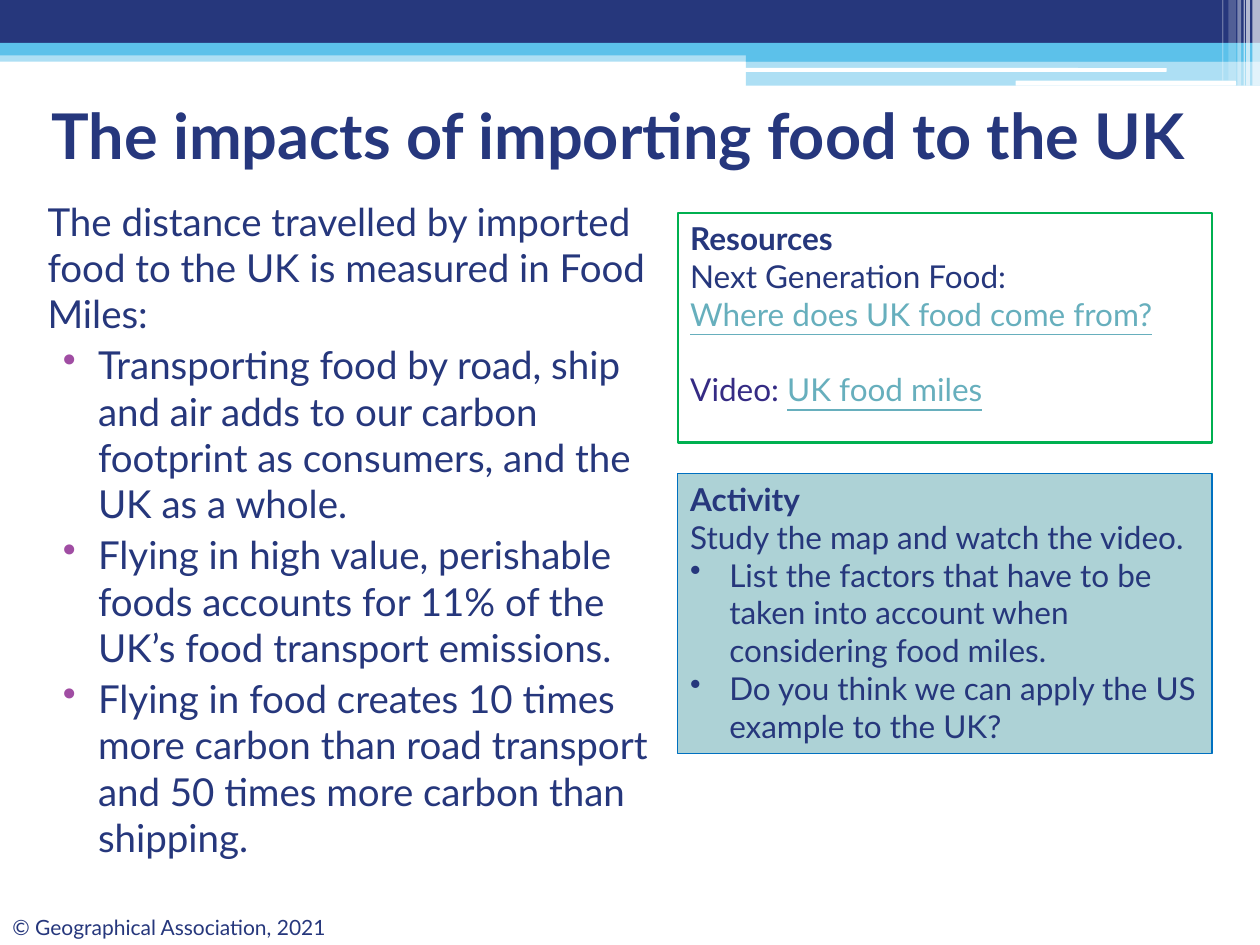
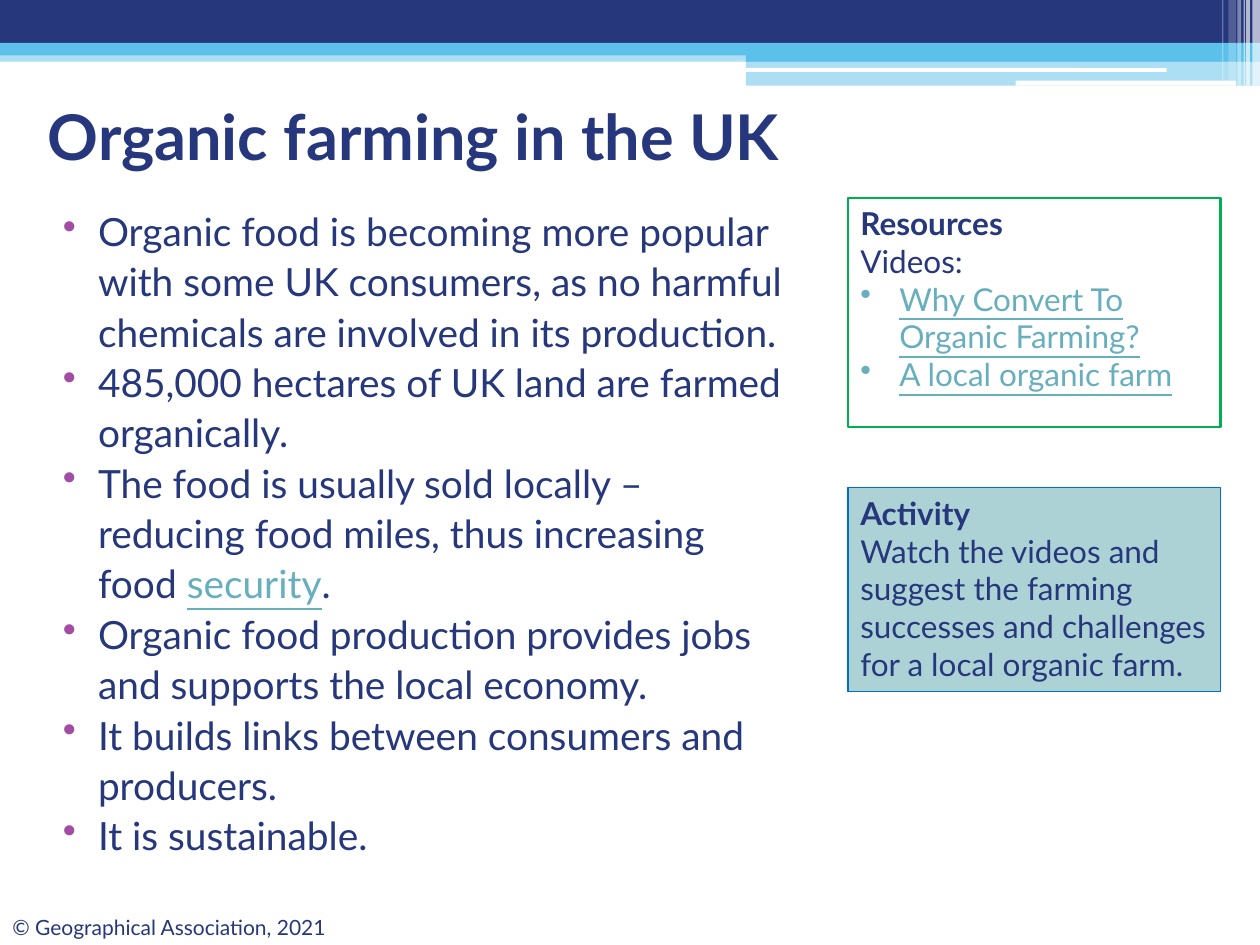
from dataclasses import dataclass

from lxml import etree
from pptx import Presentation
from pptx.dml.color import RGBColor
from pptx.enum.shapes import MSO_SHAPE
from pptx.enum.text import MSO_ANCHOR, PP_ALIGN
from pptx.oxml.ns import qn
from pptx.util import Inches, Pt


@dataclass(frozen=True)
class Theme:
    font: str = "Lato"
    navy: str = "26377C"
    title: str = "26377D"
    sky: str = "5CC1EA"
    white: str = "FFFFFF"
    link: str = "67AFBD"
    violet: str = "352B84"
    bullet: str = "A04DA3"
    resource_line: str = "00B050"
    activity_fill: str = "ADD2D6"
    activity_line: str = "0070C0"
    title_size: float = 36
    panel_size: float = 18
    footer_size: float = 12


@dataclass
class Text:
    """One paragraph: runs are (text, style) pairs, style being plain, bold, link or violet."""
    runs: list
    bullet: str = ""
    indent: float = 0
    hanging: float = 0
    before: float = 0
    spacing: float = 1.0


THEME = Theme()
RUN_COLOURS = {"link": THEME.link, "violet": THEME.violet, "title": THEME.title}


def add_block(slide, place, fill=None, opacity=100, line=None, line_width=0.75,
              kind=MSO_SHAPE.RECTANGLE):
    shape = slide.shapes.add_shape(kind, *map(Inches, place))
    shape.shadow.inherit = False
    if fill:
        shape.fill.solid()
        shape.fill.fore_color.rgb = RGBColor.from_string(fill)
        if opacity < 100:
            colour = shape.fill._xPr.find(qn("a:solidFill"))[0]
            etree.SubElement(colour, qn("a:alpha"), val=str(opacity * 1000))
    else:
        shape.fill.background()
    if line:
        shape.line.color.rgb = RGBColor.from_string(line)
        shape.line.width = Pt(line_width)
    else:
        shape.line.fill.background()
    return shape


def write(shape, texts, size, anchor=MSO_ANCHOR.TOP):
    frame = shape.text_frame
    frame.word_wrap = True
    frame.vertical_anchor = anchor
    for index, text in enumerate(texts):
        paragraph = frame.paragraphs[0] if index == 0 else frame.add_paragraph()
        if text.bullet:
            properties = paragraph._p.get_or_add_pPr()
            properties.set("marL", str(Inches(text.indent)))
            properties.set("indent", str(-Inches(text.hanging)))
            colour = etree.SubElement(properties, qn("a:buClr"))
            etree.SubElement(colour, qn("a:srgbClr"), val=text.bullet)
            etree.SubElement(properties, qn("a:buChar"), char="•")
        paragraph.alignment = PP_ALIGN.LEFT
        paragraph.line_spacing = text.spacing
        if index:
            paragraph.space_before = Pt(text.before)
        for words, style in text.runs:
            run = paragraph.add_run()
            run.text = words
            run.font.name = THEME.font
            run.font.size = Pt(size)
            run.font.bold = style in ("bold", "title")
            run.font.underline = style == "link"
            run.font.color.rgb = RGBColor.from_string(RUN_COLOURS.get(style, THEME.navy))


# Header: (place, colour, opacity)
HEADER_BANDS = [
    ((0, 0.4, 10, 0.09), THEME.sky, 50),
    ((0, 0, 10, 0.34), THEME.navy, 100),
    ((0, 0.34, 10, 0.1), THEME.sky, 100),
    ((5.92, 0.39, 4.08, 0.1), THEME.sky, 100),
    ((5.92, 0.48, 4.08, 0.2), THEME.sky, 50),
]
HEADER_SLITS = [(5.91, 0.54, 3.35, 0.03), (8.06, 0.64, 1.75, 0.04)]
# Vertical stripes: (left, width, height, opacity)
HEADER_STRIPES = [
    (9.94, 0.06, 0.68, 65), (9.89, 0.03, 0.68, 65), (9.87, 0.01, 0.68, 60),
    (9.82, 0.03, 0.68, 40), (9.75, 0.06, 0.64, 20), (9.7, 0.01, 0.64, 30),
]

BODY_BULLET = dict(bullet=THEME.bullet, indent=0.4, hanging=0.28)
PANEL_BULLET = dict(indent=0.31, hanging=0.31)

IMPACTS = [
    "Transporting food by road, ship and air adds to our carbon footprint as consumers, "
    "and the UK as a whole.",
    "Flying in high value, perishable foods accounts for 11% of the UK’s food transport "
    "emissions.",
    "Flying in food creates 10 times more carbon than road transport and 50 times more "
    "carbon than shipping.",
]
ORGANIC_POINTS = [
    [("Organic food is becoming more popular with some UK consumers, as no harmful "
      "chemicals are involved in its production.", "plain")],
    [("485,000 hectares of UK land are farmed organically.", "plain")],
    [("The food is usually sold locally – reducing food miles, thus increasing food ", "plain"),
     ("security", "link"), (".", "plain")],
    [("Organic food production provides jobs and supports the local economy.", "plain")],
    [("It builds links between consumers and producers.", "plain")],
    [("It is sustainable.", "plain")],
]

SLIDES = [
    dict(
        title="The impacts of importing food to the UK",
        title_place=(0.31, 0.61, 9.33, 0.91),
        body_place=(0.28, 1.52, 4.96, 5.43),
        body_size=22,
        body=[Text([("The distance travelled by imported food to the UK is measured in "
                     "Food Miles:", "plain")])]
        + [Text([(impact, "plain")], before=3, **BODY_BULLET) for impact in IMPACTS],
        resources_place=(5.38, 1.69, 4.24, 1.82),
        resources=[
            Text([("Next Generation Food:", "plain")]),
            Text([("Where does UK food come from?", "link")]),
            Text([("Video: ", "violet"), ("UK food miles", "link")], before=21.6),
        ],
        activity_place=(5.38, 3.76, 4.24, 2.22),
        activity=[
            Text([("Study the map and watch the video.", "plain")]),
            Text([("List the factors that have to be taken into account when considering "
                   "food miles.", "plain")], bullet=THEME.navy, **PANEL_BULLET),
            Text([("Do you think we can apply the US example to the UK?", "plain")],
                 bullet=THEME.navy, **PANEL_BULLET),
        ],
    ),
    dict(
        title="Organic farming in the UK",
        title_place=(0.28, 0.64, 8.85, 0.87),
        body_place=(0.28, 1.57, 6.06, 5.47),
        body_size=22.2,
        body=[Text(runs, spacing=1.08, **BODY_BULLET) for runs in ORGANIC_POINTS],
        resources_place=(6.73, 1.57, 2.96, 1.82),
        resources=[Text([("Videos:", "plain")])]
        + [Text([(video, "link")], bullet=THEME.link, **PANEL_BULLET)
           for video in ("Why Convert To Organic Farming?", "A local organic farm")],
        activity_place=(6.73, 3.87, 2.96, 1.62),
        activity=[Text([("Watch the videos and suggest the farming successes and challenges "
                         "for a local organic farm.", "plain")])],
    ),
]

presentation = Presentation()
presentation.slide_width = Inches(10)
presentation.slide_height = Inches(7.5)

for content in SLIDES:
    slide = presentation.slides.add_slide(presentation.slide_layouts[6])

    for place, colour, opacity in HEADER_BANDS:
        add_block(slide, place, colour, opacity)
    for place in HEADER_SLITS:
        add_block(slide, place, THEME.white, kind=MSO_SHAPE.ROUNDED_RECTANGLE)
    for left, width, height, opacity in HEADER_STRIPES:
        add_block(slide, (left, 0, width, height), THEME.white, opacity)

    footer = slide.shapes.add_textbox(*map(Inches, (0, 7.21, 2.87, 0.3)))
    write(footer, [Text([("© Geographical Association, 2021", "plain")])], THEME.footer_size)

    title = slide.shapes.add_textbox(*map(Inches, content["title_place"]))
    write(title, [Text([(content["title"], "title")])], THEME.title_size, MSO_ANCHOR.MIDDLE)

    body = slide.shapes.add_textbox(*map(Inches, content["body_place"]))
    write(body, content["body"], content["body_size"])

    resources = add_block(slide, content["resources_place"],
                          line=THEME.resource_line, line_width=1.5)
    write(resources, [Text([("Resources", "bold")])] + content["resources"], THEME.panel_size)

    activity = add_block(slide, content["activity_place"], THEME.activity_fill,
                         line=THEME.activity_line)
    write(activity, [Text([("Activity", "bold")])] + content["activity"], THEME.panel_size)

presentation.save("out.pptx")
